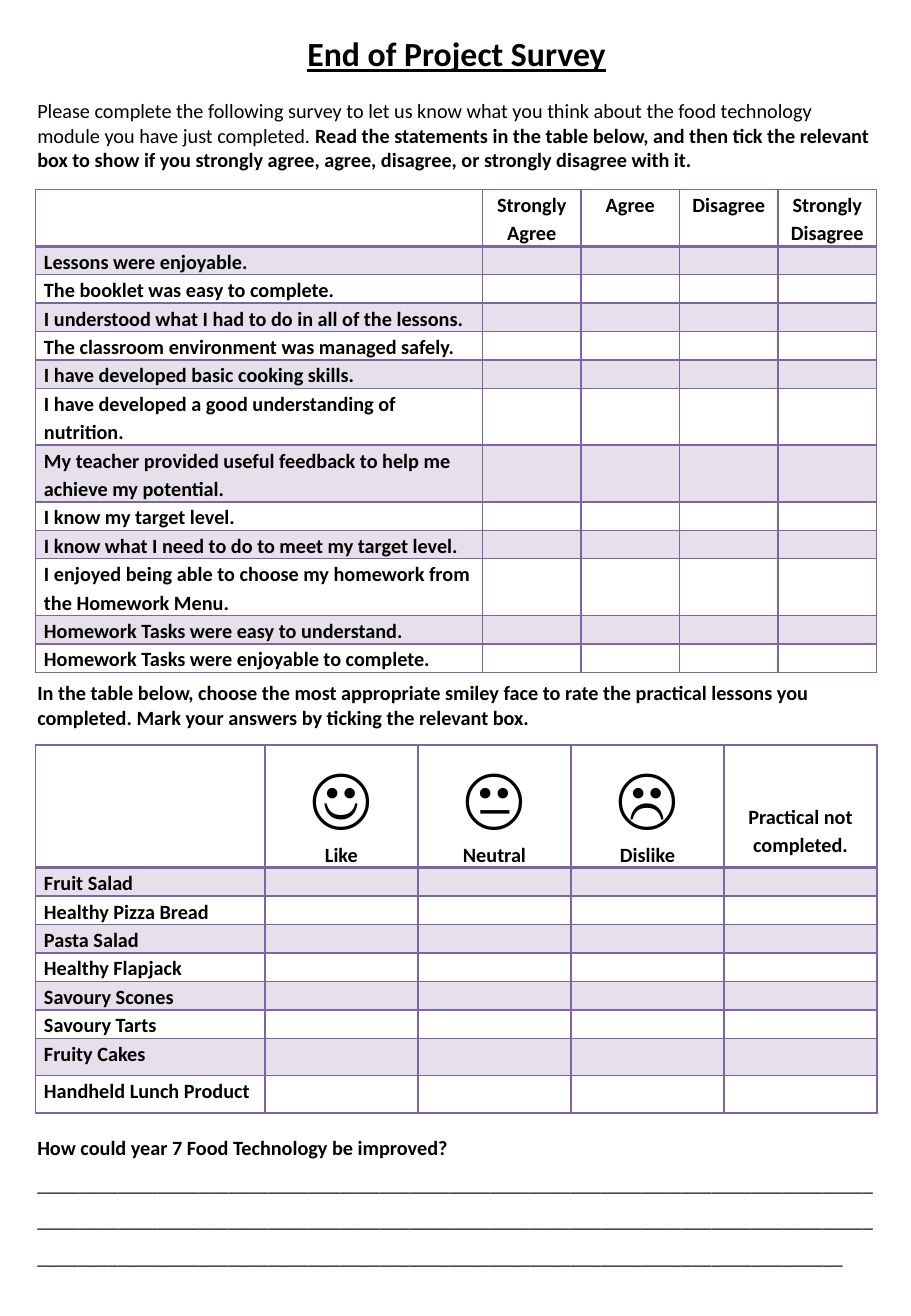
"""Build a one-page end of project survey with two tick-box tables."""
from dataclasses import dataclass

from lxml import etree
from pptx import Presentation
from pptx.dml.color import RGBColor
from pptx.enum.text import MSO_ANCHOR as Anchor, MSO_AUTO_SIZE as Auto, PP_ALIGN as Align
from pptx.oxml.ns import qn
from pptx.util import Cm, Pt

INK, PLUM = "000000", "8064A2"
LEFT, WIDE = 0.53, 18.04
EDGE, LINE = 0.74, 0.59


@dataclass
class Note:
    top: float
    high: float
    texts: list[tuple[str, bool]]
    space: float = 1.0


@dataclass
class Grid:
    top: float
    cols: list[float]
    rows: list[float]
    heads: list[str]
    items: list[str]
    anchor: Anchor


NOTES = [
    Note(1.93, 1.8, [
        ("Please complete the following survey to let us know what you think about "
         "the food technology module you have just completed. ", False),
        ("Read the statements in the table below, and then tick the relevant box to "
         "show if you strongly agree, agree, disagree, or strongly disagree with it.", True)]),
    Note(14.1, 1.3, [
        ("In the table below, choose the most appropriate smiley face to rate the "
         "practical lessons you completed. Mark your answers by ticking the relevant box.",
         True)]),
    Note(23.34, 3.4, [
        ("How could year 7 Food Technology be improved? ", True), ("_" * 246, False)], 1.5),
]

GRIDS = [
    Grid(3.96, [9.35] + [2.06] * 4,
         [2 * LINE] + [LINE] * 5 + [2 * LINE] * 2 + [LINE] * 2 + [2 * LINE] + [LINE] * 2,
         ["Strongly Agree", "Agree", "Disagree", "Strongly Disagree"],
         ["Lessons were enjoyable.",
          "The booklet was easy to complete.",
          "I understood what I had to do in all of the lessons.",
          "The classroom environment was managed safely.",
          "I have developed basic cooking skills.",
          "I have developed a good understanding of nutrition.",
          "My teacher provided useful feedback to help me achieve my potential.",
          "I know my target level.",
          "I know what I need to do to meet my target level.",
          "I enjoyed being able to choose my homework from the Homework Menu.",
          "Homework Tasks were easy to understand.",
          "Homework Tasks were enjoyable to complete."], Anchor.MIDDLE),
    Grid(15.57, [4.8] + [3.2] * 4, [2.57] + [LINE] * 6 + [0.78] * 2,
         ["☺\nLike", "😐\nNeutral", "☹\nDislike", "Practical not completed."],
         ["Fruit Salad", "Healthy Pizza Bread", "Pasta Salad", "Healthy Flapjack",
          "Savoury Scones", "Savoury Tarts", "Fruity Cakes", "Handheld Lunch Product"],
         Anchor.TOP),
]


def tint(color, code: str) -> None:
    color.rgb = RGBColor.from_string(code)


def style(item, **form) -> None:
    for name, value in form.items():
        setattr(item, name, value)


def write(para, text: str, size: float = 12, bold: bool = True, line: bool = False) -> None:
    run = para.add_run()
    run.text = text
    style(run.font, name="Calibri", size=Pt(size), bold=bold, underline=line)
    tint(run.font.color, INK)


def rule(cell, head: bool) -> None:
    props = cell._tc.get_or_add_tcPr()
    for spot, side in enumerate("LRTB"):
        wide = 2 if head and side == "B" else 1
        edge = etree.Element(qn(f"a:ln{side}"), w=str(Pt(wide)))
        fill = etree.SubElement(edge, qn("a:solidFill"))
        etree.SubElement(fill, qn("a:srgbClr"), val=PLUM)
        props.insert(spot, edge)


def shade(cell, band: bool) -> None:
    if not band:
        cell.fill.background()
        return
    cell.fill.solid()
    tint(cell.fill.fore_color, PLUM)
    for color in cell._tc.tcPr.findall(f"{qn('a:solidFill')}/{qn('a:srgbClr')}"):
        etree.SubElement(color, qn("a:alpha"), val="20000")


def fill_cell(cell, text: str, align: Align) -> None:
    frame = cell.text_frame
    for spot, line in enumerate(text.split("\n")):
        para = frame.add_paragraph() if spot else frame.paragraphs[0]
        style(para, alignment=align, line_spacing=1.15)
        if line:
            write(para, line, 40 if len(line) == 1 else 12)
        else:
            etree.SubElement(para._p, qn("a:endParaRPr"), sz="1200")


def draw_grid(slide, grid: Grid) -> None:
    table = slide.shapes.add_table(
        len(grid.rows), len(grid.cols), Cm(EDGE), Cm(grid.top),
        Cm(sum(grid.cols)), Cm(sum(grid.rows))).table
    style(table, first_row=False, horz_banding=False)
    for col, wide in zip(table.columns, grid.cols):
        col.width = Cm(wide)
    for row, high in zip(table.rows, grid.rows):
        row.height = Cm(high)
    blank = [""] * len(grid.heads)
    texts = [["", *grid.heads]] + [[item, *blank] for item in grid.items]
    for r, line in enumerate(texts):
        for c, text in enumerate(line):
            cell = table.cell(r, c)
            drop = 2 * LINE if text.startswith("Practical") else 0
            style(cell, margin_left=Cm(0.18), margin_right=Cm(0.18), margin_top=Cm(drop),
                  margin_bottom=0, vertical_anchor=grid.anchor if r else Anchor.TOP)
            fill_cell(cell, text, Align.LEFT if c == 0 else Align.CENTER)
            rule(cell, r == 0)
            shade(cell, r % 2 == 1)


def set_frame(frame) -> None:
    style(frame, word_wrap=True, auto_size=Auto.NONE, vertical_anchor=Anchor.TOP,
          margin_left=Cm(0.25), margin_right=Cm(0.25),
          margin_top=Cm(0.13), margin_bottom=Cm(0.13))


def draw_note(slide, note: Note) -> None:
    frame = slide.shapes.add_textbox(Cm(LEFT), Cm(note.top), Cm(WIDE), Cm(note.high)).text_frame
    set_frame(frame)
    para = frame.paragraphs[0]
    para.line_spacing = note.space
    for text, bold in note.texts:
        write(para, text, bold=bold)


def draw_title(slide, text: str) -> None:
    title = slide.shapes.title
    style(title, left=Cm(LEFT), top=Cm(0.56), width=Cm(WIDE), height=Cm(1.2))
    set_frame(title.text_frame)
    para = title.text_frame.paragraphs[0]
    style(para, alignment=Align.CENTER, line_spacing=1.0, space_before=Pt(0))
    write(para, text, 20, line=True)


def main() -> None:
    deck = Presentation()
    style(deck, slide_width=Cm(19.05), slide_height=Cm(27.51))
    slide = deck.slides.add_slide(deck.slide_layouts[5])
    draw_title(slide, "End of Project Survey")
    for note in NOTES:
        draw_note(slide, note)
    for grid in GRIDS:
        draw_grid(slide, grid)
    deck.save("out.pptx")


if __name__ == "__main__":
    main()
